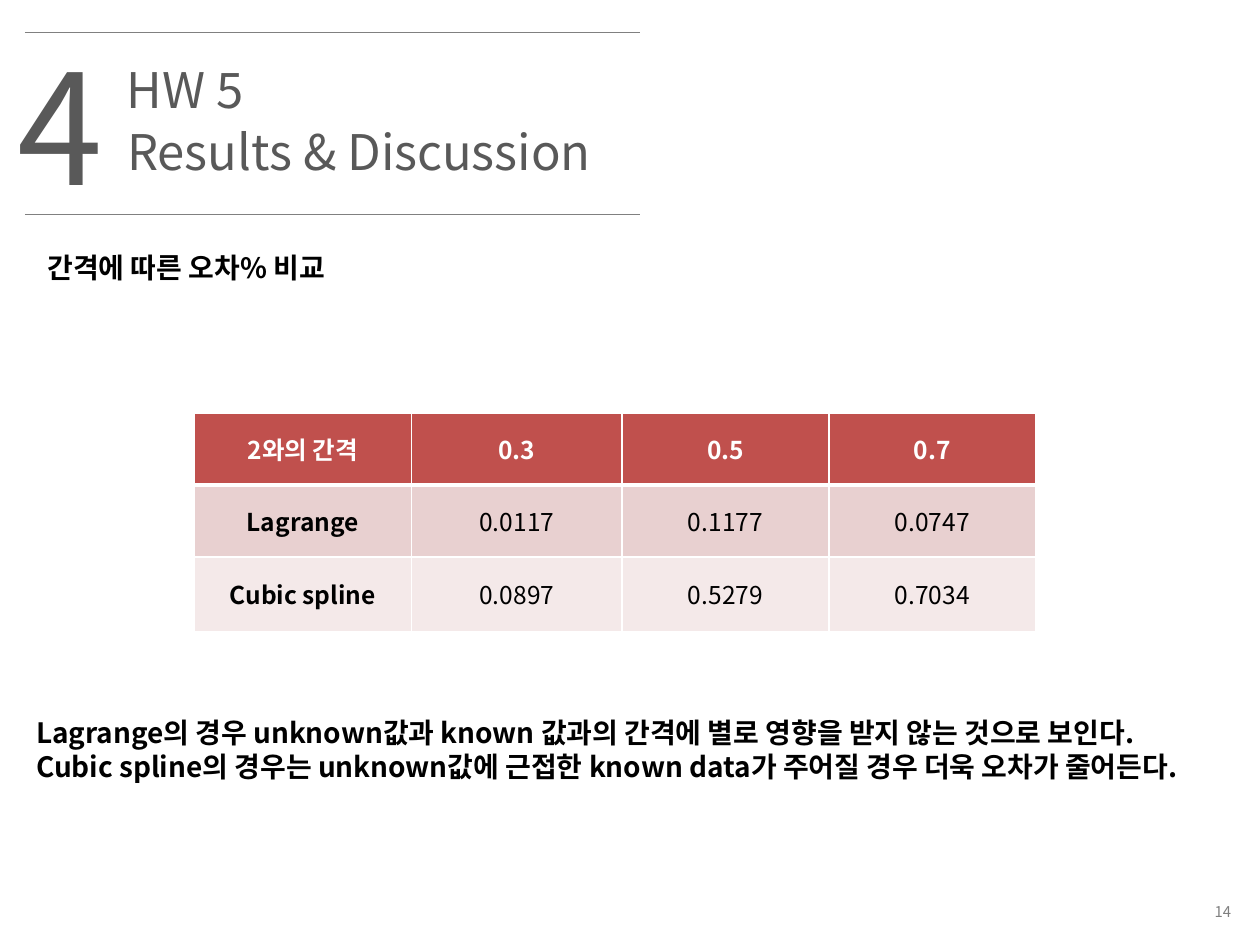
from lxml import etree
from pptx import Presentation
from pptx.dml.color import RGBColor
from pptx.enum.shapes import MSO_CONNECTOR
from pptx.enum.text import MSO_ANCHOR, MSO_AUTO_SIZE, PP_ALIGN
from pptx.oxml.ns import qn
from pptx.util import Cm, Pt

STRAIGHT = MSO_CONNECTOR.STRAIGHT
TOP, MIDDLE = MSO_ANCHOR.TOP, MSO_ANCHOR.MIDDLE
LEFT, CENTER, RIGHT = PP_ALIGN.LEFT, PP_ALIGN.CENTER, PP_ALIGN.RIGHT
NO_FIT = MSO_AUTO_SIZE.NONE

FONT = "Noto Sans CJK KR"
WHITE = RGBColor(0xFF, 0xFF, 0xFF)
BLACK = RGBColor(0x00, 0x00, 0x00)
DARK_GRAY = RGBColor(0x59, 0x59, 0x59)
GRAY = RGBColor(0x80, 0x80, 0x80)
RED = RGBColor(0xC0, 0x50, 0x4D)
ROW_FILLS = [RED, RGBColor(0xE8, 0xD0, 0xD0), RGBColor(0xF4, 0xE9, 0xE9)]

TITLE = {"size": Pt(28), "bold": False}
NUMERAL = {"size": Pt(88), "bold": False}
STATEMENT = {"size": Pt(16), "bold": True}
PAGE = {"size": Pt(8.5), "bold": False}

ERRORS = [
    ["2와의 간격", "0.3", "0.5", "0.7"],
    ["Lagrange", "0.0117", "0.1177", "0.0747"],
    ["Cubic spline", "0.0897", "0.5279", "0.7034"],
]
COLUMN_WIDTHS = [4.39, 4.24, 4.17, 4.17]
ROW_HEIGHTS = [1.45, 1.45, 1.5]
FINDINGS = [
    "Lagrange의 경우 unknown값과 known 값과의 간격에 별로 영향을 받지 않는 것으로 보인다.",
    "Cubic spline의 경우는 unknown값에 근접한 known data가 주어질 경우 더욱 오차가 줄어든다.",
]


def write(frame, lines, style, color, align=LEFT, spacing=None):
    frame.text = "\n".join(lines)
    for paragraph in frame.paragraphs:
        paragraph.alignment = align
        paragraph.line_spacing = spacing
        for run in paragraph.runs:
            for key, value in style.items():
                setattr(run.font, key, value)
            run.font.name = FONT
            run.font.color.rgb = color
            east_asian = etree.SubElement(run.font._element, qn("a:ea"))
            east_asian.set("typeface", FONT)


def place(shape, box, anchor=TOP):
    for side, length in zip(("left", "top", "width", "height"), box):
        setattr(shape, side, Cm(length))
    settings = {"word_wrap": True, "auto_size": NO_FIT, "vertical_anchor": anchor}
    for key, value in settings.items():
        setattr(shape.text_frame, key, value)
    return shape.text_frame


def add_text(slide, box, lines, style, color, align=LEFT, anchor=TOP):
    text_box = slide.shapes.add_textbox(*map(Cm, box))
    write(place(text_box, box, anchor), lines, style, color, align)


def add_rule(slide, left, top, width):
    rule = slide.shapes.add_connector(
        STRAIGHT, Cm(left), Cm(top), Cm(left + width), Cm(top))
    rule.line.color.rgb = GRAY
    rule.line.width = Pt(0.75)
    etree.SubElement(rule._element.spPr, qn("a:effectLst"))


def add_header(slide, left, top, width, height):
    for rule_top in (top, top + height):
        add_rule(slide, left, rule_top, width)
    add_text(slide, (left - 0.4, top - 0.15, 7.6, 4.01), ["4"], NUMERAL, DARK_GRAY)
    text_left = left + 1.81
    add_text(slide, (text_left, top + 0.41, 14.55, 1.45), ["HW 5"], TITLE, DARK_GRAY)
    title_box = (text_left, top + 2.24, 11.6, 1.02)
    write(place(slide.shapes.title, title_box), ["Results & Discussion"],
          TITLE, DARK_GRAY, spacing=Pt(17))


def set_borders(cell, bottom_width):
    properties = cell._tc.get_or_add_tcPr()
    widths = {"a:lnL": 1, "a:lnR": 1, "a:lnT": 1, "a:lnB": bottom_width}
    for position, (tag, width) in enumerate(widths.items()):
        border = etree.Element(qn(tag), w=str(Pt(width)))
        fill = etree.SubElement(border, qn("a:solidFill"))
        etree.SubElement(fill, qn("a:srgbClr"), val=str(WHITE))
        properties.insert(position, border)


def add_error_table(slide, left, top):
    size = (sum(COLUMN_WIDTHS), sum(ROW_HEIGHTS))
    table = slide.shapes.add_table(
        len(ERRORS), len(ERRORS[0]), Cm(left), Cm(top), *map(Cm, size)).table
    for column, width in zip(table.columns, COLUMN_WIDTHS):
        column.width = Cm(width)
    for row, height in zip(table.rows, ROW_HEIGHTS):
        row.height = Cm(height)
    for r, values in enumerate(ERRORS):
        for c, value in enumerate(values):
            cell = table.cell(r, c)
            header = r == 0
            style = {"size": Pt(14), "bold": header or c == 0}
            write(cell.text_frame, [value], style, WHITE if header else BLACK, CENTER)
            cell.vertical_anchor = MIDDLE
            cell.fill.solid()
            cell.fill.fore_color.rgb = ROW_FILLS[r]
            set_borders(cell, 3 if header or r == 1 and False else 1)


def main():
    presentation = Presentation()
    presentation.slide_width, presentation.slide_height = Cm(25.4), Cm(19.05)
    slide = presentation.slides.add_slide(presentation.slide_layouts[5])
    add_header(slide, 0.5, 0.66, 12.4, 3.66)
    add_text(slide, (0.71, 4.93, 6.73, 0.94), ["간격에 따른 오차% 비교"], STATEMENT, BLACK)
    add_error_table(slide, 3.91, 8.33)
    add_text(slide, (0.48, 14.3, 25.02, 1.63), FINDINGS, STATEMENT, BLACK)
    add_text(slide, (19.71, 18.03, 5.36, 0.69), ["14"], PAGE, GRAY, RIGHT, MIDDLE)
    presentation.save("out.pptx")


if __name__ == "__main__":
    main()
